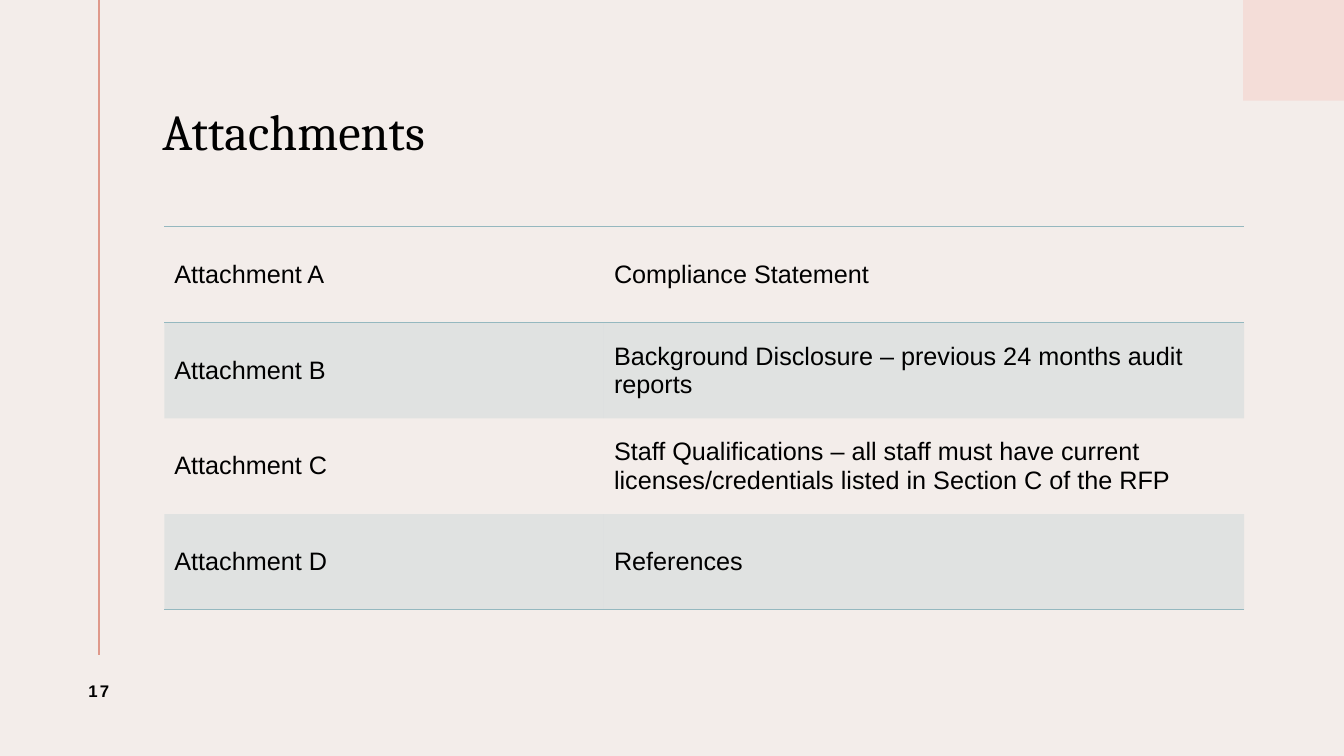
from lxml.etree import SubElement
from pptx import Presentation
from pptx.dml.color import RGBColor
from pptx.enum.shapes import MSO_CONNECTOR as LINE, MSO_SHAPE as SHAPE
from pptx.enum.text import MSO_ANCHOR as ANCHOR, PP_ALIGN as ALIGN
from pptx.oxml import parse_xml
from pptx.oxml.ns import nsdecls, qn
from pptx.util import Inches, Pt

TITLE = "Attachments"
PAGE = "17"
ROWS = [
    ("Attachment A", "Compliance Statement"),
    ("Attachment B", "Background Disclosure – previous 24 months audit reports"),
    ("Attachment C", "Staff Qualifications – all staff must have current "
                     "licenses/credentials listed in Section C of the RFP"),
    ("Attachment D", "References"),
]
COLS = (4.36, 6.35)
ROW_H = 0.95
PAPER, BLUSH, CORAL, TEAL, INK = "F3EDEA", "F4DDD8", "DF998B", "95B8BF", "000000"
NO_STYLE = "{2D5ABB26-0587-4C30-8999-92F81FD0307C}"


def color(code):
    return RGBColor.from_string(code)


def box(left, top, width, height):
    return [Inches(n) for n in (left, top, width, height)]


def write(frame, text, size, face="Arial", bold=False):
    frame.text = text
    frame.word_wrap = True
    frame.vertical_anchor = ANCHOR.MIDDLE
    font = frame.paragraphs[0].runs[0].font
    font.size, font.name, font.bold = Pt(size), face, bold
    font.color.rgb = color(INK)
    return frame.paragraphs[0]


def rule(cell, sides):
    """Draw thin teal borders on the given sides (T, B) of a cell."""
    for spot, side in enumerate(sides):
        cell._tc.get_or_add_tcPr().insert(spot, parse_xml(
            f'<a:ln{side} {nsdecls("a")} w="12700"><a:solidFill>'
            f'<a:srgbClr val="{TEAL}"/></a:solidFill></a:ln{side}>'))


def shade(cell):
    """Fill a cell with teal at 20% opacity."""
    cell.fill.solid()
    cell.fill.fore_color.rgb = color(TEAL)
    tint = cell._tc.tcPr.find(qn("a:solidFill")).find(qn("a:srgbClr"))
    SubElement(tint, qn("a:alpha")).set("val", "20000")


def add_decor(slide):
    corner = slide.shapes.add_shape(SHAPE.RECTANGLE, *box(12.33, 0, 1, 1))
    corner.shadow.inherit = False
    corner.fill.solid()
    corner.fill.fore_color.rgb = color(BLUSH)
    corner.line.fill.background()
    margin = slide.shapes.add_connector(LINE.STRAIGHT, *box(0.98, 0, 0.98, 6.5))
    margin.line.color.rgb = color(CORAL)
    margin.line.width = Pt(1.5)
    SubElement(margin._element.spPr, qn("a:effectLst"))


def add_title(slide):
    title = slide.shapes.title
    title.left, title.top, title.width, title.height = box(1.61, 0.55, 10.73, 1.56)
    para = write(title.text_frame, TITLE, 36, "Cambria")
    para.alignment = ALIGN.LEFT
    para.line_spacing = 0.9
    title.text_frame.margin_left = 0


def add_list(slide):
    place = box(1.63, 2.25, sum(COLS), ROW_H * len(ROWS))
    table = slide.shapes.add_table(len(ROWS), len(COLS), *place).table
    table.first_row = table.horz_banding = False
    table._tbl.tblPr.find(qn("a:tableStyleId")).text = NO_STYLE
    for col, width in zip(table.columns, COLS):
        col.width = Inches(width)
    for r, texts in enumerate(ROWS):
        table.rows[r].height = Inches(ROW_H)
        for c, text in enumerate(texts):
            cell = table.cell(r, c)
            write(cell.text_frame, text, 18)
            cell.vertical_anchor = ANCHOR.MIDDLE
            if r % 2:
                shade(cell)
            if r == 0:
                rule(cell, "TB")
            elif r == len(ROWS) - 1:
                rule(cell, "B")


def add_page(slide):
    frame = slide.shapes.add_textbox(*box(0.45, 6.5, 1.06, 0.71)).text_frame
    para = write(frame, PAGE, 12, bold=True)
    para.alignment = ALIGN.CENTER
    para.runs[0].font._element.set("spc", "150")


def main():
    deck = Presentation()
    deck.slide_width, deck.slide_height = Inches(13.33), Inches(7.5)
    slide = deck.slides.add_slide(deck.slide_layouts[5])
    slide.background.fill.solid()
    slide.background.fill.fore_color.rgb = color(PAPER)
    add_decor(slide)
    add_title(slide)
    add_list(slide)
    add_page(slide)
    deck.save("out.pptx")


if __name__ == "__main__":
    main()
